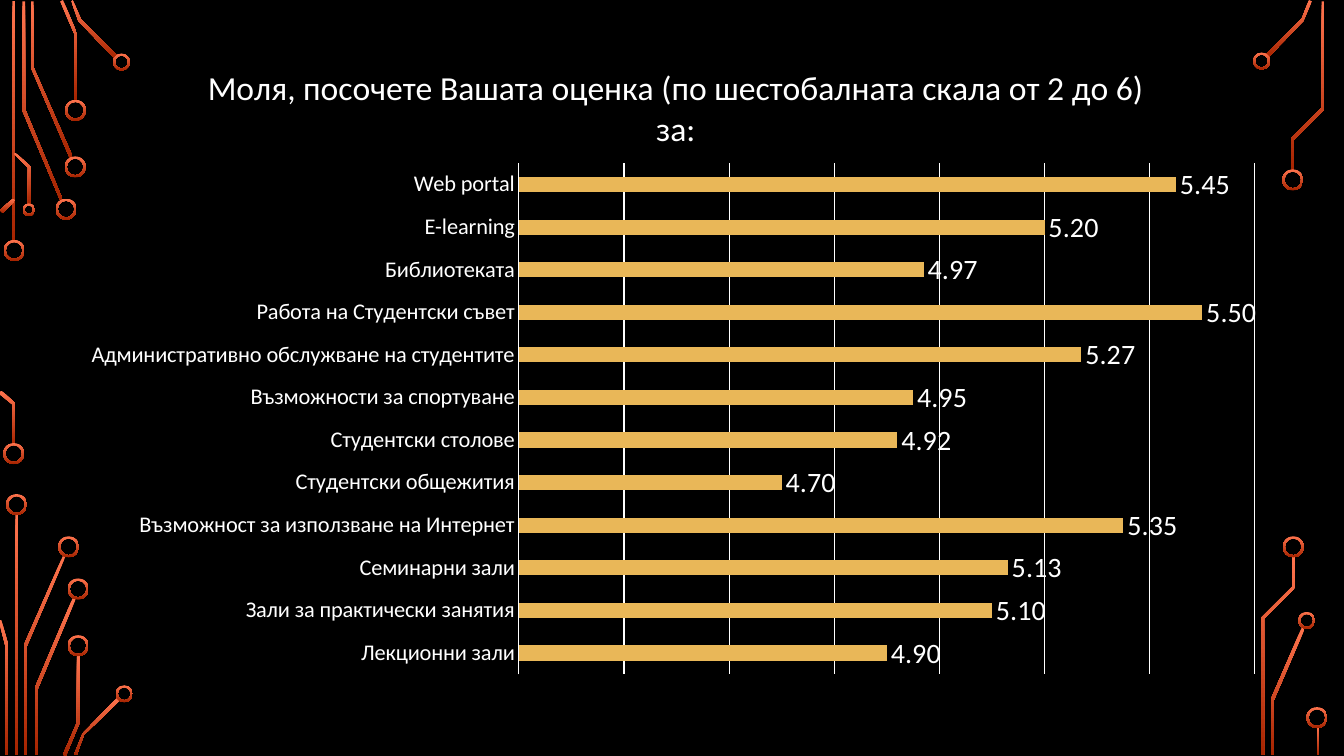
from dataclasses import dataclass
from math import hypot

from lxml import etree
from pptx import Presentation
from pptx.chart.data import CategoryChartData
from pptx.dml.color import RGBColor
from pptx.enum.chart import XL_CHART_TYPE, XL_LABEL_POSITION, XL_TICK_MARK
from pptx.enum.shapes import MSO_SHAPE
from pptx.oxml.ns import qn
from pptx.util import Pt

BAR_CLUSTERED = XL_CHART_TYPE.BAR_CLUSTERED
OUTSIDE_END = XL_LABEL_POSITION.OUTSIDE_END
NO_TICKS = XL_TICK_MARK.NONE
DONUT = MSO_SHAPE.DONUT
RECTANGLE = MSO_SHAPE.RECTANGLE

BLACK = RGBColor(0x00, 0x00, 0x00)
WHITE = RGBColor(0xFF, 0xFF, 0xFF)
GOLD = RGBColor(0xE9, 0xB7, 0x58)
CORAL = RGBColor(0xFF, 0x74, 0x4E)
RUST = RGBColor(0xA6, 0x24, 0x00)

FONT = "Calibri"
WIRE = 2
RING_WALL = 1.5
LARGE, MEDIUM, SMALL = 15, 12.2, 9

Point = tuple[float, float]


@dataclass
class Post:
    x: float
    top: float
    bottom: float


@dataclass
class Ring:
    x: float
    y: float
    size: float = LARGE


POSTS = [Post(9.8, 0.7, 172.8), Post(11.9, 367.2, 539.3), Post(941.4, 519.1, 539.3)]

TRACES: list[list[Point]] = [
    # top left
    [(43.9, 142.9), (16.6, 78.5), (16.6, 0.7)],
    [(51.1, 112.7), (23.4, 47.9), (23.4, 0.7)],
    [(53.6, 72), (53.6, 23.8), (43.9, 0.4)],
    [(83.2, 41), (57.2, 14.8), (51.5, 0.4)],
    [(1.1, 151.2), (10.1, 142.6)],
    [(20.9, 146.2), (20.9, 119.2), (10.8, 109.4)],
    # bottom left
    [(10.1, 317.5), (10.1, 288.7), (0, 280.1)],
    [(18.4, 538.6), (18.4, 461.5), (45.7, 397.1)],
    [(4.7, 538.6), (4.7, 461.5), (0, 443.2)],
    [(25.6, 539.3), (25.6, 491.4), (52.9, 427.3)],
    [(45.7, 539.6), (55.8, 516.2), (55.8, 468)],
    [(53.6, 538.9), (59.4, 524.9), (85, 499)],
    # top right
    [(905, 40), (930.6, 14), (936.4, 0.4)],
    [(923, 121.7), (923, 99.7), (945, 77.4), (945, 0.7)],
    # bottom right
    [(909, 539.3), (909, 499.3), (931, 448.9)],
    [(901.8, 539.3), (901.8, 441.7), (924.1, 419.8), (924.1, 397.4)],
]

RINGS = [
    Ring(10.1, 178.9), Ring(9.8, 324), Ring(47.2, 149.4), Ring(53.7, 119.2),
    Ring(53.9, 78.8), Ring(11.8, 360.4), Ring(49, 390.6), Ring(55.8, 420.7),
    Ring(55.8, 461.2), Ring(923.4, 128.5), Ring(923.8, 390.6), Ring(940.7, 512.6),
    Ring(86.8, 44.3, MEDIUM), Ring(88.8, 495.6, MEDIUM),
    Ring(901.2, 43.6, MEDIUM), Ring(933.4, 443.2, MEDIUM),
    Ring(20.6, 149.8, SMALL),
]

TITLE = "Моля, посочете Вашата оценка (по шестобалната скала от 2 до 6) за:"
RATINGS = {
    "Лекционни зали": 4.9,
    "Зали за практически занятия": 5.1,
    "Семинарни зали": 5.13,
    "Възможност за използване на Интернет": 5.35,
    "Студентски общежития": 4.7,
    "Студентски столове": 4.92,
    "Възможности за спортуване": 4.95,
    "Административно обслужване на студентите": 5.27,
    "Работа на Студентски съвет": 5.5,
    "Библиотеката": 4.97,
    "E-learning": 5.2,
    "Web portal": 5.45,
}


def paint_copper(shape) -> None:
    """Fill with the vertical coral-to-rust gradient, without line or shadow."""
    shape.shadow.inherit = False
    shape.line.fill.background()
    shape.fill.gradient()
    shape.fill.gradient_angle = 270
    for stop, colour in zip(shape.fill.gradient_stops, (CORAL, RUST)):
        stop.color.rgb = colour


def trace_outline(centre: list[Point]) -> list[Point]:
    """Widen a centre line into a band with mitred corners and square ends."""
    normals = []
    for (x1, y1), (x2, y2) in zip(centre, centre[1:]):
        length = hypot(x2 - x1, y2 - y1)
        normals.append(((y1 - y2) / length, (x2 - x1) / length))
    left, right = [], []
    for (x, y), (ax, ay), (bx, by) in zip(centre, normals[:1] + normals, normals + normals[-1:]):
        reach = WIRE / 2 / (1 + ax * bx + ay * by)
        dx, dy = (ax + bx) * reach, (ay + by) * reach
        left.append((x + dx, y + dy))
        right.append((x - dx, y - dy))
    return left + right[::-1]


def draw_trace(shapes, centre: list[Point]) -> None:
    start, *rest = trace_outline(centre)
    builder = shapes.build_freeform(*start, scale=Pt(1))
    builder.add_line_segments(rest, close=True)
    paint_copper(builder.convert_to_shape())


def draw_post(shapes, post: Post) -> None:
    paint_copper(shapes.add_shape(RECTANGLE, Pt(post.x - WIRE / 2), Pt(post.top),
                                  Pt(WIRE), Pt(post.bottom - post.top)))


def draw_ring(shapes, ring: Ring) -> None:
    donut = shapes.add_shape(DONUT, Pt(ring.x - ring.size / 2), Pt(ring.y - ring.size / 2),
                             Pt(ring.size), Pt(ring.size))
    donut.adjustments[0] = RING_WALL / ring.size
    paint_copper(donut)


def style_font(font, size: float) -> None:
    font.name, font.size, font.bold = FONT, Pt(size), False
    font.color.rgb = WHITE


def place_plot(chart, x: float, y: float, w: float, h: float) -> None:
    """Fix the inner plot area, in fractions of the chart."""
    plot_area = chart.plots[0]._element.getparent()
    for old in plot_area.findall(qn("c:layout")):
        plot_area.remove(old)
    layout = etree.Element(qn("c:layout"))
    plot_area.insert(0, layout)
    manual = etree.SubElement(layout, qn("c:manualLayout"))
    settings = {"layoutTarget": "inner", "xMode": "edge", "yMode": "edge",
                "x": x, "y": y, "w": w, "h": h}
    for tag, value in settings.items():
        etree.SubElement(manual, qn(f"c:{tag}")).set("val", str(value))


def draw_ratings(shapes) -> None:
    data = CategoryChartData(number_format="0.00")
    data.categories = list(RATINGS)
    data.add_series("Series 1", list(RATINGS.values()))
    chart = shapes.add_chart(BAR_CLUSTERED, Pt(51.8), Pt(28.8), Pt(861.8), Pt(462.2), data).chart
    style_font(chart.font, 10)
    chart.has_legend = False
    chart.has_title = True
    title_run = chart.chart_title.text_frame.paragraphs[0].add_run()
    title_run.text = TITLE
    style_font(title_run.font, 24)
    chart.chart_title.include_in_layout = False

    plot = chart.plots[0]
    plot.gap_width = 182
    plot.vary_by_categories = False
    bars = plot.series[0].format.fill
    bars.solid()
    bars.fore_color.rgb = GOLD
    plot.has_data_labels = True
    labels = plot.data_labels
    labels.show_value = True
    labels.position = OUTSIDE_END
    labels.number_format, labels.number_format_is_linked = "0.00", False
    style_font(labels.font, 20)

    topics, scores = chart.category_axis, chart.value_axis
    topics.major_tick_mark = topics.minor_tick_mark = NO_TICKS
    style_font(topics.tick_labels.font, 16)
    scores.minimum_scale, scores.maximum_scale, scores.major_unit = 4.2, 5.6, 0.2
    scores.has_major_gridlines = True
    scores.visible = False
    for line in (topics.format.line, scores.major_gridlines.format.line):
        line.color.rgb = WHITE
        line.width = Pt(0.75)
    place_plot(chart, 0.37, 0.19, 0.61, 0.79)


def main() -> None:
    deck = Presentation()
    deck.slide_width, deck.slide_height = Pt(960), Pt(540)
    slide = deck.slides.add_slide(deck.slide_layouts[6])
    slide.background.fill.solid()
    slide.background.fill.fore_color.rgb = BLACK
    for post in POSTS:
        draw_post(slide.shapes, post)
    for centre in TRACES:
        draw_trace(slide.shapes, centre)
    for ring in RINGS:
        draw_ring(slide.shapes, ring)
    draw_ratings(slide.shapes)
    deck.save("out.pptx")


if __name__ == "__main__":
    main()
